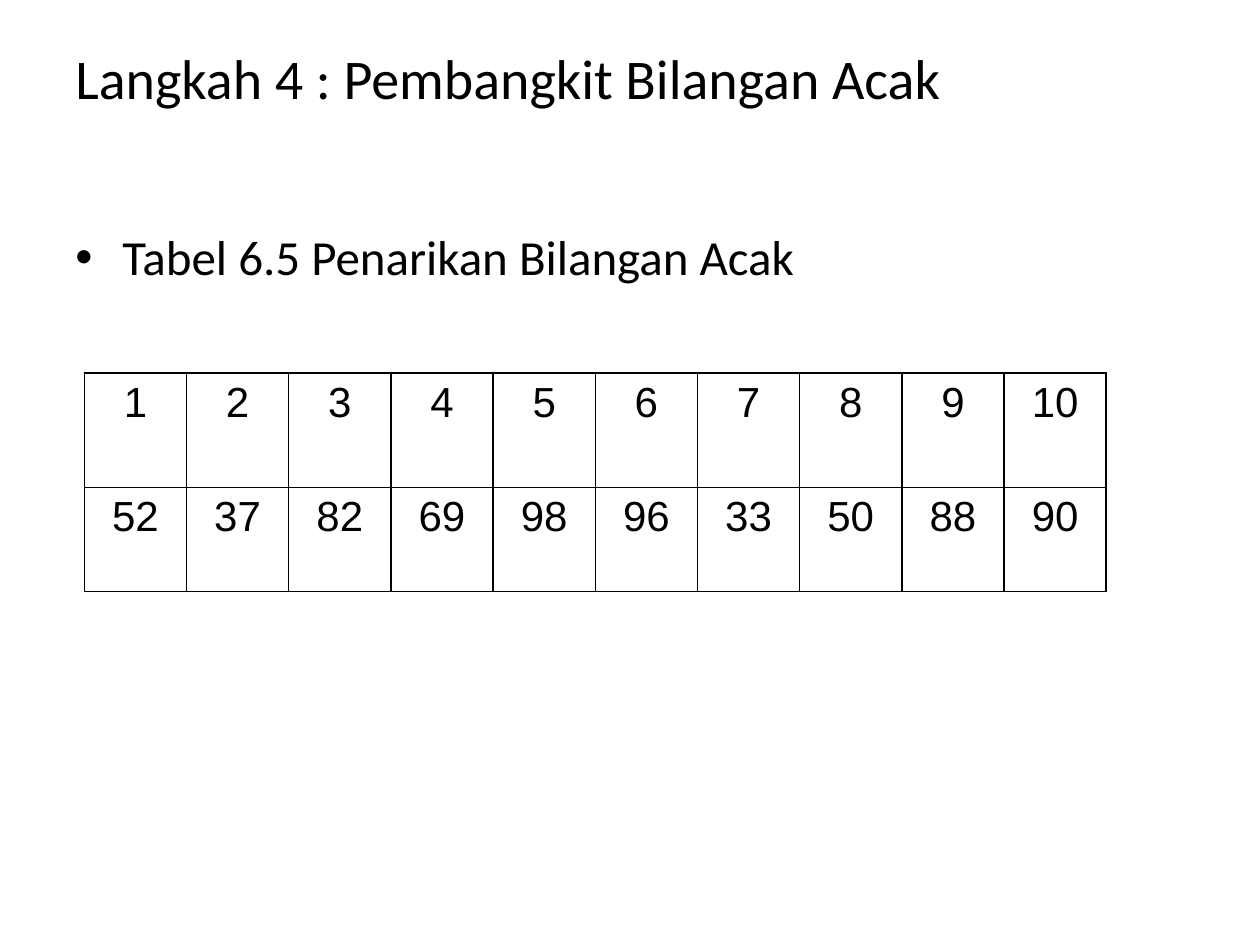
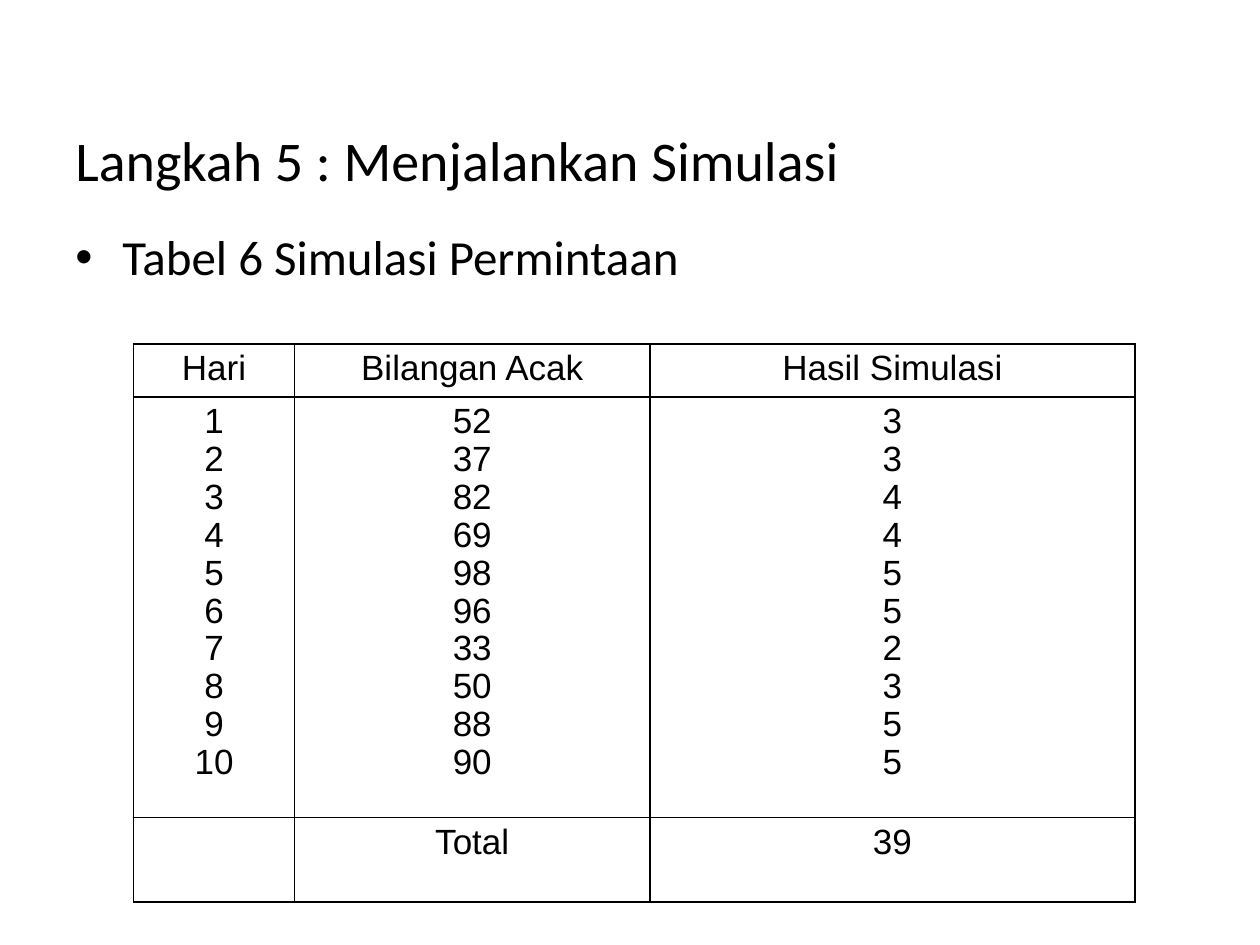
"""Build two slides on random numbers and a demand simulation."""
from lxml import etree
from pptx import Presentation
from pptx import util as u
from pptx.dml.color import RGBColor
from pptx.enum import text
from pptx.oxml import ns

INK = {"text": "000000", "line": "000000", "page": "FFFFFF"}
HEAD, BODY = "Calibri", "Arial"
LEFT, WIDE = 1.27, 22.86
HANG = 0.95

DAYS = list(range(1, 11))
DRAWS = [52, 37, 82, 69, 98, 96, 33, 50, 88, 90]
SALES = [3, 3, 4, 4, 5, 5, 2, 3, 5, 5]

PAGES = [
    {
        "title": "Langkah 4 : Pembangkit Bilangan Acak", "top": 0.76, "tall": 3.18,
        "point": "Tabel 6.5 Penarikan Bilangan Acak",
        "at": (1.7, 7.52), "cols": [2.06] * len(DAYS), "rows": [2.31, 2.09],
        "size": 24, "pitch": 1.0,
        "cells": [DAYS, DRAWS],
    },
    {
        "title": "Langkah 5 : Menjalankan Simulasi", "top": 2.41, "tall": 1.83,
        "point": "Tabel 6 Simulasi Permintaan",
        "at": (2.69, 6.93), "cols": [3.25, 7.16, 9.78], "rows": [1.04, 8.13, 1.7],
        "size": 20, "pitch": 0.97,
        "cells": [["Hari", "Bilangan Acak", "Hasil Simulasi"],
                  [DAYS, DRAWS, SALES],
                  ["", "Total", sum(SALES)]],
    },
]


def style(para, face, size):
    para.font.name = face
    para.font.size = u.Pt(size)
    para.font.color.rgb = RGBColor.from_string(INK["text"])


def bullet(para):
    props = para._p.get_or_add_pPr()
    props.set("marL", str(u.Cm(HANG)))
    props.set("indent", str(-u.Cm(HANG)))
    etree.SubElement(props, ns.qn("a:buFont"), typeface="Arial")
    etree.SubElement(props, ns.qn("a:buChar"), char="•")


def label(slide, words, top, tall, size, mark=False):
    box = slide.shapes.add_textbox(u.Cm(LEFT), u.Cm(top), u.Cm(WIDE), u.Cm(tall))
    box.text_frame.word_wrap = True
    box.text_frame.vertical_anchor = text.MSO_ANCHOR.TOP
    para = box.text_frame.paragraphs[0]
    para.text = words
    if mark:
        bullet(para)
    style(para, HEAD, size)


def border(cell):
    props = cell._tc.get_or_add_tcPr()
    for spot, side in enumerate(("lnL", "lnR", "lnT", "lnB")):
        line = etree.Element(ns.qn("a:" + side), w=str(u.Pt(1)))
        fill = etree.SubElement(line, ns.qn("a:solidFill"))
        etree.SubElement(fill, ns.qn("a:srgbClr"), val=INK["line"])
        props.insert(spot, line)


def fill_cell(cell, value, page):
    lines = value if isinstance(value, list) else [value]
    cell.text = "\n".join(map(str, lines))
    for para in cell.text_frame.paragraphs:
        para.alignment = text.PP_ALIGN.CENTER
        para.line_spacing = page["pitch"]
        style(para, BODY, page["size"])
    cell.fill.background()
    border(cell)


def grid(slide, page):
    cols, rows = page["cols"], page["rows"]
    left, top = page["at"]
    table = slide.shapes.add_table(len(rows), len(cols), u.Cm(left), u.Cm(top),
                                   u.Cm(sum(cols)), u.Cm(sum(rows))).table
    table.first_row = table.horz_banding = False
    for col, wide in zip(table.columns, cols):
        col.width = u.Cm(wide)
    for row, tall, values in zip(table.rows, rows, page["cells"]):
        row.height = u.Cm(tall)
        for cell, value in zip(row.cells, values):
            fill_cell(cell, value, page)


def main():
    deck = Presentation()
    deck.slide_width, deck.slide_height = u.Cm(25.4), u.Cm(19.05)
    for page in PAGES:
        slide = deck.slides.add_slide(deck.slide_layouts[6])
        slide.background.fill.solid()
        slide.background.fill.fore_color.rgb = RGBColor.from_string(INK["page"])
        label(slide, page["title"], page["top"], page["tall"], 32)
        label(slide, page["point"], 4.45, 12.57, 28, mark=True)
        grid(slide, page)
    deck.save("out.pptx")


if __name__ == "__main__":
    main()
